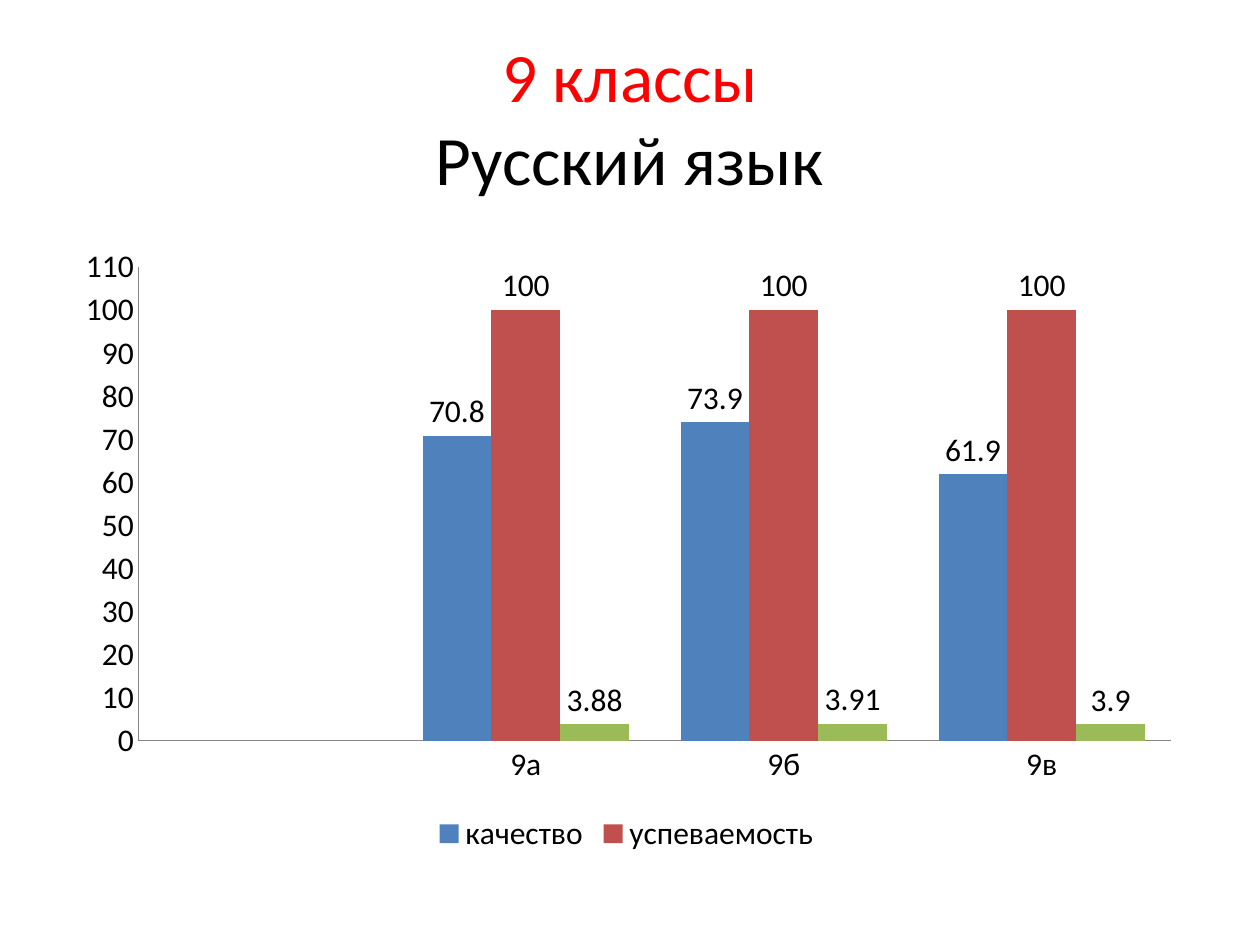
from dataclasses import dataclass

from lxml import etree
from pptx import Presentation
from pptx import util as u
from pptx.chart.data import CategoryChartData
from pptx.dml.color import RGBColor
from pptx.enum import chart as charts, text
from pptx.oxml.ns import qn


@dataclass(frozen=True)
class Theme:
    font: str = "Calibri"
    title_size: float = 39.6
    chart_size: float = 18
    ink: str = "000000"
    accent: str = "FF0000"
    axis: str = "868686"
    series: tuple = ("4F81BD", "C0504D", "9BBB59")


THEME = Theme()
CLASSES = ("", "9а", "9б", "9в")
RESULTS = {
    "качество": (None, 70.8, 73.9, 61.9),
    "успеваемость": (None, 100, 100, 100),
    "Series 3": (None, 3.88, 3.91, 3.9),
}
UNNAMED_SERIES = 2


def style_font(font, size, color):
    font.name = THEME.font
    font.size = u.Pt(size)
    font.color.rgb = RGBColor.from_string(color)


def add_title(slide, lines, colors):
    box = slide.shapes.add_textbox(u.Pt(36), u.Pt(21.6), u.Pt(648), u.Pt(90))
    frame = box.text_frame
    frame.text = "\v".join(lines)
    frame.word_wrap = True
    frame.vertical_anchor = text.MSO_ANCHOR.MIDDLE
    paragraph = frame.paragraphs[0]
    paragraph.alignment = text.PP_ALIGN.CENTER
    for run, color in zip(paragraph.runs, colors):
        style_font(run.font, THEME.title_size, color)


def style_axis(axis):
    axis.has_major_gridlines = False
    axis.major_tick_mark = charts.XL_TICK_MARK.NONE
    axis.minor_tick_mark = charts.XL_TICK_MARK.NONE
    axis.format.line.color.rgb = RGBColor.from_string(THEME.axis)
    axis.format.line.width = u.Pt(0.75)


def style_series(series, color):
    series.format.fill.solid()
    series.format.fill.fore_color.rgb = RGBColor.from_string(color)
    series.invert_if_negative = False
    labels = series.data_labels
    labels.show_value = True
    labels.position = charts.XL_LABEL_POSITION.OUTSIDE_END
    style_font(labels.font, THEME.chart_size, THEME.ink)


def place_plot(chart, **fractions):
    """Fix the inner plot area as fractions of the chart."""
    plot_area = chart.plots[0]._element.getparent()
    for layout in plot_area.findall(qn("c:layout")):
        plot_area.remove(layout)
    layout = etree.Element(qn("c:layout"))
    plot_area.insert(0, layout)
    manual = etree.SubElement(layout, qn("c:manualLayout"))
    settings = {"layoutTarget": "inner", "xMode": "edge", "yMode": "edge", **fractions}
    for name, value in settings.items():
        etree.SubElement(manual, qn(f"c:{name}"), val=str(value))


def hide_legend_entry(legend, index):
    entry = etree.Element(qn("c:legendEntry"))
    etree.SubElement(entry, qn("c:idx"), val=str(index))
    etree.SubElement(entry, qn("c:delete"), val="1")
    legend._element.find(qn("c:legendPos")).addnext(entry)


def add_results_chart(slide):
    data = CategoryChartData()
    data.categories = CLASSES
    for name, values in RESULTS.items():
        data.add_series(name, values)
    chart = slide.shapes.add_chart(
        charts.XL_CHART_TYPE.COLUMN_CLUSTERED,
        u.Pt(34), u.Pt(134.6), u.Pt(648), u.Pt(356.4), data,
    ).chart
    style_font(chart.font, THEME.chart_size, THEME.ink)
    chart.has_title = False

    plot = chart.plots[0]
    plot.gap_width = 75
    plot.overlap = 0
    plot.vary_by_categories = False
    for series, color in zip(plot.series, THEME.series):
        style_series(series, color)

    style_axis(chart.category_axis)
    style_axis(chart.value_axis)
    chart.value_axis.minimum_scale = 0
    chart.value_axis.maximum_scale = 110
    chart.value_axis.major_unit = 10

    chart.has_legend = True
    chart.legend.position = charts.XL_LEGEND_POSITION.BOTTOM
    chart.legend.include_in_layout = False
    hide_legend_entry(chart.legend, UNNAMED_SERIES)
    place_plot(chart, x=0.07, y=0.05, w=0.91, h=0.76)


def main():
    presentation = Presentation()
    presentation.slide_width = u.Pt(720)
    presentation.slide_height = u.Pt(540)
    slide = presentation.slides.add_slide(presentation.slide_layouts[6])
    add_title(slide, ("9 классы", "Русский язык"), (THEME.accent, THEME.ink))
    add_results_chart(slide)
    presentation.save("out.pptx")


if __name__ == "__main__":
    main()
